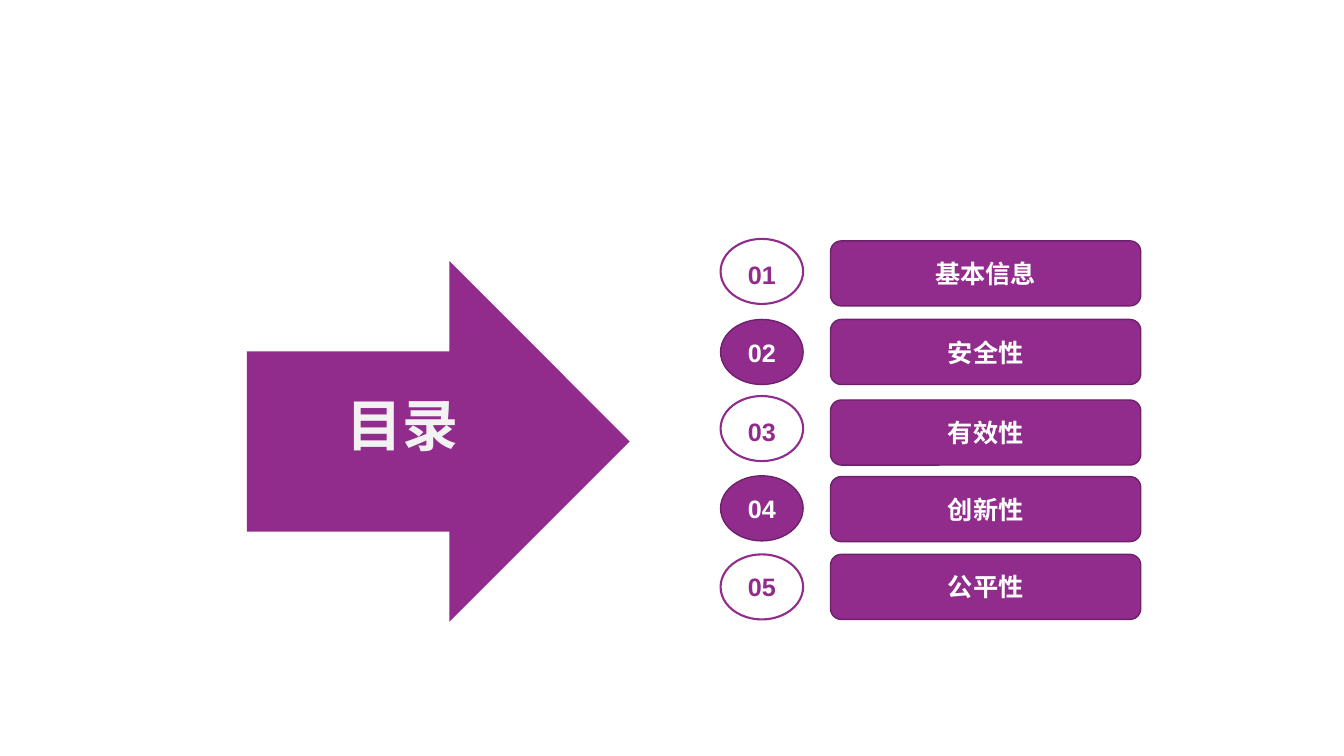
import dataclasses
from typing import Optional

import pptx
import pptx.dml.color
import pptx.enum.shapes
import pptx.enum.text
import pptx.shapes.autoshape
import pptx.slide
import pptx.text.text
import pptx.util

Cm = pptx.util.Cm
Pt = pptx.util.Pt
RGBColor = pptx.dml.color.RGBColor
Kind = pptx.enum.shapes.MSO_SHAPE
Align = pptx.enum.text.PP_ALIGN
Anchor = pptx.enum.text.MSO_ANCHOR

PURPLE = RGBColor(0x91, 0x2C, 0x8D)
DARK_PURPLE = RGBColor(0x6D, 0x21, 0x6A)
WHITE = RGBColor(0xFF, 0xFF, 0xFF)
PALE_GREY = RGBColor(0xF2, 0xF2, 0xF2)

OVAL_LEFT, OVAL_WIDTH = 18.16, 2.08
BAR_LEFT, BAR_WIDTH = 20.93, 7.82
ROW_HEIGHT = 1.64
TEXT_INSET = 0.13
ENTRY_SIZE = 18


@dataclasses.dataclass(frozen=True)
class Box:
    left: float
    top: float
    width: float
    height: float


@dataclasses.dataclass(frozen=True)
class Entry:
    """A contents row; number_drop lowers the number within its oval."""
    label: str
    oval_top: float
    bar_top: float
    number_drop: float = 0


ENTRIES = [
    Entry("基本信息", 6.02, 6.07, 0.08),
    Entry("安全性", 8.05, 8.05),
    Entry("有效性", 9.98, 10.08, 0.08),
    Entry("创新性", 11.99, 12.01),
    Entry("公平性", 13.97, 13.97),
]


def add_box(page: pptx.slide.Slide, kind: Kind, box: Box, fill: Optional[RGBColor],
            line: Optional[RGBColor], weight: float = 1) -> pptx.shapes.autoshape.Shape:
    shape = page.shapes.add_shape(
        kind, Cm(box.left), Cm(box.top), Cm(box.width), Cm(box.height))
    shape.shadow.inherit = False
    if fill is None:
        shape.fill.background()
    else:
        shape.fill.solid()
        shape.fill.fore_color.rgb = fill
    if line is None:
        shape.line.fill.background()
    else:
        shape.line.color.rgb = line
        shape.line.width = Pt(weight)
    return shape


def write(frame: pptx.text.text.TextFrame, text: str, size: float,
          color: RGBColor, align: Align, drop: float = 0) -> None:
    frame_format = {
        "word_wrap": True,
        "auto_size": pptx.enum.text.MSO_AUTO_SIZE.NONE,
        "vertical_anchor": Anchor.MIDDLE,
        "margin_top": Cm(TEXT_INSET + 2 * drop),
        "margin_bottom": Cm(TEXT_INSET),
    }
    for name, value in frame_format.items():
        setattr(frame, name, value)
    para = frame.paragraphs[0]
    para.alignment = align
    span = para.add_run()
    span.text = text
    for name, value in {"name": "Arial", "size": Pt(size), "bold": True}.items():
        setattr(span.font, name, value)
    span.font.color.rgb = color


def add_heading(page: pptx.slide.Slide) -> None:
    """Place the title on top of the large arrow."""
    arrow = add_box(page, Kind.RIGHT_ARROW, Box(6.22, 6.58, 9.65, 9.09), PURPLE, None)
    title = page.shapes.title
    place = {"left": 8.48, "top": 9.7, "width": 3.76, "height": 1.96}
    for name, value in place.items():
        setattr(title, name, Cm(value))
    write(title.text_frame, "目录", 40, PALE_GREY, Align.LEFT)
    title.element.addprevious(arrow.element)


def add_entry(page: pptx.slide.Slide, number: int, entry: Entry) -> None:
    oval_box = Box(OVAL_LEFT, entry.oval_top, OVAL_WIDTH, ROW_HEIGHT)
    if number % 2:
        oval = add_box(page, Kind.OVAL, oval_box, None, PURPLE, 1.5)
        number_color = PURPLE
    else:
        oval = add_box(page, Kind.OVAL, oval_box, PURPLE, DARK_PURPLE)
        number_color = WHITE
    write(oval.text_frame, f"{number:02d}", ENTRY_SIZE, number_color,
          Align.CENTER, entry.number_drop)

    bar_box = Box(BAR_LEFT, entry.bar_top, BAR_WIDTH, ROW_HEIGHT)
    bar = add_box(page, Kind.ROUNDED_RECTANGLE, bar_box, PURPLE, DARK_PURPLE)
    write(bar.text_frame, entry.label, ENTRY_SIZE, WHITE, Align.CENTER)


def main() -> None:
    deck = pptx.Presentation()
    deck.slide_width, deck.slide_height = Cm(33.87), Cm(19.05)
    page = deck.slides.add_slide(deck.slide_layouts.get_by_name("Title Only"))
    add_heading(page)
    for number, entry in enumerate(ENTRIES, start=1):
        add_entry(page, number, entry)
    deck.save("out.pptx")


if __name__ == "__main__":
    main()
